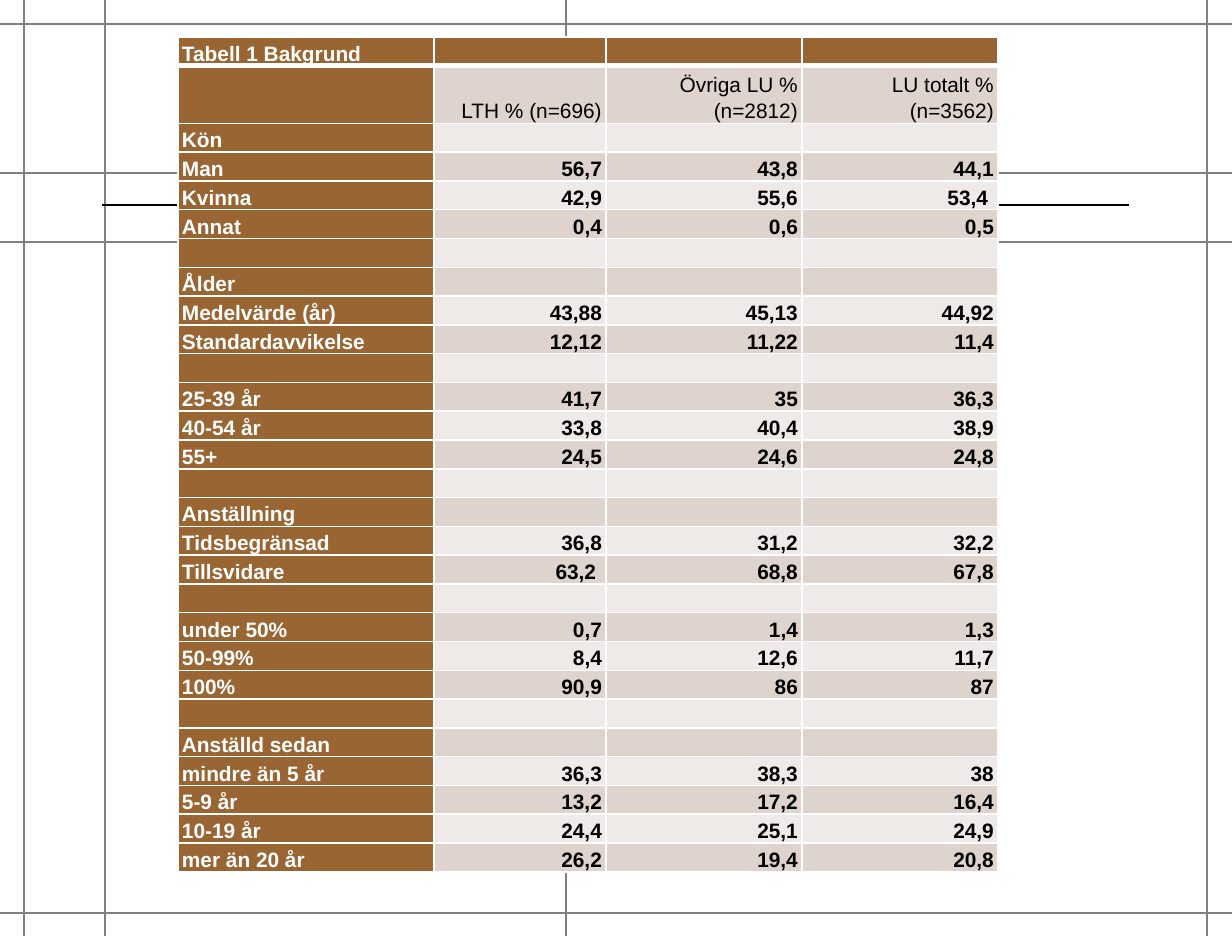
from lxml.etree import SubElement
from pptx import Presentation
from pptx.dml.color import RGBColor
from pptx.enum.shapes import MSO_CONNECTOR
from pptx.enum.text import MSO_ANCHOR, PP_ALIGN
from pptx.oxml.ns import qn
from pptx.util import Pt

PX = 7304
WIDTH, HEIGHT = 1232, 936
WHITE = RGBColor(0xFF, 0xFF, 0xFF)
BLACK = RGBColor(0, 0, 0)
GRAY = RGBColor(0x80, 0x80, 0x80)
BROWN = RGBColor(0x99, 0x66, 0x33)
DARK_BAND = RGBColor(0xDE, 0xD3, 0xCD)
LIGHT_BAND = RGBColor(0xEF, 0xEA, 0xE8)

GUIDES_ACROSS = (24, 173, 242, 913)
GUIDES_DOWN = (24, 105, 566, 1207)
COLUMNS = (256, 172, 196, 196)
ROWS = [
    ("Tabell 1 Bakgrund",),
    ("", "LTH % (n=696)", "Övriga LU % (n=2812)", "LU totalt % (n=3562)"),
    ("Kön",),
    ("Man", "56,7", "43,8", "44,1"),
    ("Kvinna", "42,9", "55,6", "53,4 "),
    ("Annat", "0,4", "0,6", "0,5"),
    (),
    ("Ålder",),
    ("Medelvärde (år)", "43,88", "45,13", "44,92"),
    ("Standardavvikelse", "12,12", "11,22", "11,4"),
    (),
    ("25-39 år", "41,7", "35", "36,3"),
    ("40-54 år", "33,8", "40,4", "38,9"),
    ("55+", "24,5", "24,6", "24,8"),
    (),
    ("Anställning",),
    ("Tidsbegränsad", "36,8", "31,2", "32,2"),
    ("Tillsvidare", "63,2 ", "68,8", "67,8"),
    (),
    ("under 50%", "0,7", "1,4", "1,3"),
    ("50-99%", "8,4", "12,6", "11,7"),
    ("100%", "90,9", "86", "87"),
    (),
    ("Anställd sedan",),
    ("mindre än 5 år", "36,3", "38,3", "38"),
    ("5-9 år", "13,2", "17,2", "16,4"),
    ("10-19 år", "24,4", "25,1", "24,9"),
    ("mer än 20 år", "26,2", "19,4", "20,8"),
]


def add_line(page, left, top, right, bottom, color):
    """Draw a thin straight line without a shadow."""
    line = page.shapes.add_connector(
        MSO_CONNECTOR.STRAIGHT, left * PX, top * PX, right * PX, bottom * PX)
    line.line.color.rgb = color
    line.line.width = Pt(0.75)
    SubElement(line._element.spPr, qn("a:effectLst"))


def add_guides(page, left, top, width, height):
    """Draw the grid of guide lines and the black title rule."""
    for y in GUIDES_ACROSS:
        add_line(page, left, top + y, left + width, top + y, GRAY)
    for x in GUIDES_DOWN:
        add_line(page, left + x, top, left + x, top + height, GRAY)
    add_line(page, left + 102, top + 205, left + 1129, top + 205, BLACK)


def write_text(cell, text, color=BLACK, bold=True, align=PP_ALIGN.LEFT, size=12):
    """Write one formatted paragraph at the bottom of a cell."""
    cell.vertical_anchor = MSO_ANCHOR.BOTTOM
    cell.margin_left = cell.margin_right = 4 * PX
    cell.margin_top = cell.margin_bottom = 0
    para = cell.text_frame.paragraphs[0]
    para.alignment = align
    para.line_spacing = 1.15
    if not text:
        SubElement(para._p, qn("a:endParaRPr"), sz=str(size * 100))
        return
    span = para.add_run()
    span.text = text
    span.font.name = "Arial"
    span.font.size = Pt(size)
    span.font.bold = bold
    span.font.color.rgb = color


def set_borders(cell, top=1, bottom=1):
    """Give a cell white borders, with widths in points."""
    properties = cell._tc.get_or_add_tcPr()
    for place, (side, width) in enumerate(
            (("L", 1), ("R", 1), ("T", top), ("B", bottom))):
        border = SubElement(properties, qn(f"a:ln{side}"), w=str(Pt(width)))
        fill = SubElement(border, qn("a:solidFill"))
        SubElement(fill, qn("a:srgbClr"), val=str(WHITE))
        properties.insert(place, border)


def add_background_table(page, left, top, height):
    """Place the table; the column heading row is two units tall."""
    frame = page.shapes.add_table(
        len(ROWS), len(COLUMNS), left * PX, top * PX, sum(COLUMNS) * PX, height * PX)
    table = frame.table
    for column, width in zip(table.columns, COLUMNS):
        column.width = width * PX
    unit = height * PX // (len(ROWS) + 1)
    for number, texts in enumerate(ROWS):
        table.rows[number].height = unit * (2 if number == 1 else 1)
        band = DARK_BAND if number % 2 else LIGHT_BAND
        for position in range(len(COLUMNS)):
            cell = table.cell(number, position)
            label = position == 0
            cell.fill.solid()
            cell.fill.fore_color.rgb = BROWN if label or number == 0 else band
            set_borders(cell, top=3 if number == 1 else 1, bottom=3 if number == 0 else 1)
            write_text(
                cell, texts[position] if position < len(texts) else "",
                color=WHITE if label else BLACK,
                bold=number != 1,
                align=PP_ALIGN.LEFT if label else PP_ALIGN.RIGHT)


def main():
    """Build the one-slide deck."""
    deck = Presentation()
    deck.slide_width, deck.slide_height = WIDTH * PX, HEIGHT * PX
    page = deck.slides.add_slide(deck.slide_layouts[6])
    add_guides(page, 0, 0, WIDTH, HEIGHT)
    add_background_table(page, 178, 37, 835)
    deck.save("out.pptx")


if __name__ == "__main__":
    main()
